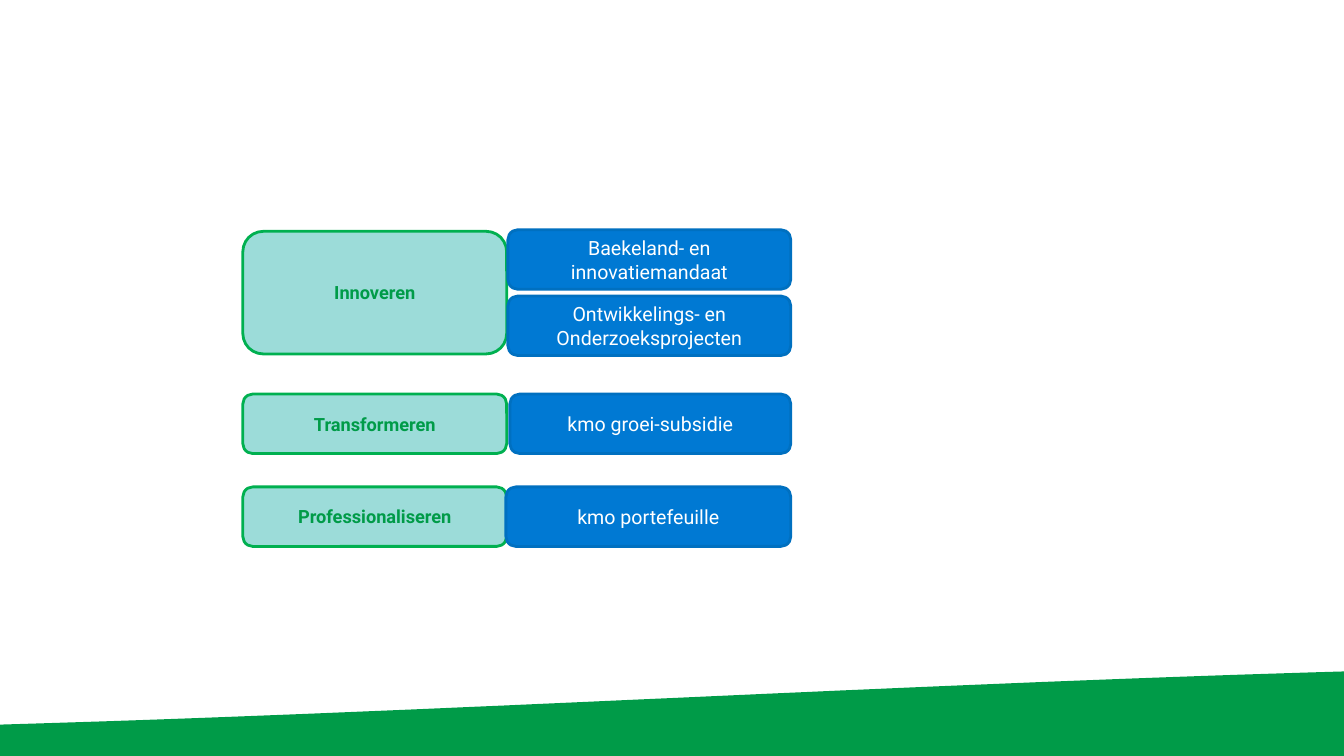
from pptx import Presentation
from pptx.dml.color import RGBColor
from pptx.enum.shapes import MSO_SHAPE
from pptx.enum.text import MSO_ANCHOR, PP_ALIGN
from pptx.util import Cm, Pt

ROUNDED = MSO_SHAPE.ROUNDED_RECTANGLE
MIDDLE = MSO_ANCHOR.MIDDLE
CENTER = PP_ALIGN.CENTER

COLORS = {
    "wave": "009B48",
    "goal_fill": "9CDCD9",
    "goal_line": "00B050",
    "goal_text": "009B48",
    "grant_fill": "0079D3",
    "grant_line": "0070C0",
    "grant_text": "FFFFFF",
}
FONT = "Roboto"
SIZES = {"goal": 13, "grant": 14}

ROWS = [
    {"goal": "Innoveren", "top": 5.79, "split": 12.8,
     "grants": ["Baekeland- en innovatiemandaat",
                "Ontwikkelings- en Onderzoeksprojecten"]},
    {"goal": "Transformeren", "top": 9.93, "split": 12.85,
     "grants": ["kmo groei-subsidie"]},
    {"goal": "Professionaliseren", "top": 12.27, "split": 12.75,
     "grants": ["kmo portefeuille"]},
]

SLIDE_W, SLIDE_H = 33.87, 19.05
GOAL_LEFT, GOAL_W = 6.12, 6.65
GRANT_RIGHT = 19.93
BOX_H, PITCH = 1.5, 1.67
STACK_INSET = 0.04
WAVE_CURVE = [(0, 18.26), (11.35, 17.93), (22.53, 17.25), (SLIDE_W, 16.92)]
WAVE_STEPS = 40


def rgb(name):
    return RGBColor.from_string(COLORS[name])


def curve_point(t):
    weights = [(1 - t) ** 3, 3 * t * (1 - t) ** 2, 3 * t ** 2 * (1 - t), t ** 3]
    return tuple(Cm(sum(w * pt[axis] for w, pt in zip(weights, WAVE_CURVE)))
                 for axis in (0, 1))


def add_wave(slide):
    points = [curve_point(i / WAVE_STEPS) for i in range(WAVE_STEPS + 1)]
    points += [(Cm(SLIDE_W), Cm(SLIDE_H)), (0, Cm(SLIDE_H))]
    builder = slide.shapes.build_freeform(*points[0])
    builder.add_line_segments(points[1:], close=True)
    sp = builder.convert_to_shape()
    sp.shadow.inherit = False
    sp.fill.solid()
    sp.fill.fore_color.rgb = rgb("wave")
    sp.line.fill.background()


def add_box(slide, kind, text, left, top, width, height):
    sp = slide.shapes.add_shape(ROUNDED, Cm(left), Cm(top), Cm(width), Cm(height))
    sp.shadow.inherit = False
    sp.fill.solid()
    sp.fill.fore_color.rgb = rgb(kind + "_fill")
    sp.line.color.rgb = rgb(kind + "_line")
    sp.line.width = Pt(2)
    tf = sp.text_frame
    tf.word_wrap = True
    tf.vertical_anchor = MIDDLE
    tf.text = text
    p = tf.paragraphs[0]
    p.alignment = CENTER
    font = p.runs[0].font
    font.name = FONT
    font.size = Pt(SIZES[kind])
    font.bold = kind == "goal"
    font.color.rgb = rgb(kind + "_text")


def main():
    prs = Presentation()
    prs.slide_width, prs.slide_height = Cm(SLIDE_W), Cm(SLIDE_H)
    slide = prs.slides.add_slide(prs.slide_layouts[6])
    add_wave(slide)
    for row in ROWS:
        top, split, grants = row["top"], row["split"], row["grants"]
        extra = len(grants) - 1
        inset = STACK_INSET * extra
        add_box(slide, "goal", row["goal"], GOAL_LEFT, top + inset,
                GOAL_W, BOX_H + PITCH * extra - 2 * inset)
        for i, grant in enumerate(grants):
            add_box(slide, "grant", grant, split, top + PITCH * i,
                    GRANT_RIGHT - split, BOX_H)
    prs.save("out.pptx")


if __name__ == "__main__":
    main()
